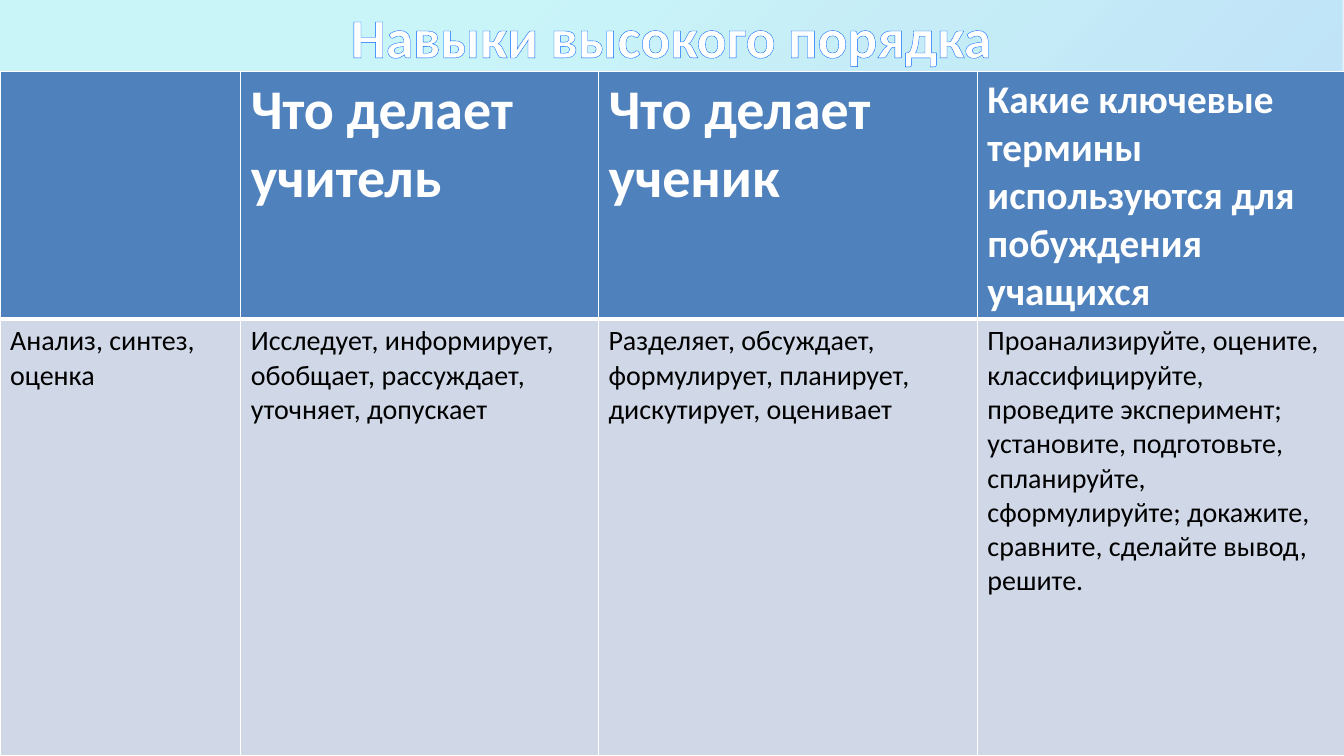
import pptx
import pptx.dml.color
import pptx.enum.shapes
import pptx.enum.text
import pptx.oxml
import pptx.oxml.ns
import pptx.util

Pt = pptx.util.Pt
RGBColor = pptx.dml.color.RGBColor
WHITE = RGBColor(0xFF, 0xFF, 0xFF)
BLACK = RGBColor(0x00, 0x00, 0x00)
HEADER_BLUE = RGBColor(0x4F, 0x81, 0xBD)
BODY_BLUE = RGBColor(0xD0, 0xD8, 0xE8)
OUTLINE_BLUE = RGBColor(0x00, 0x66, 0xFF)
BACKDROP_STOPS = [
    (25, RGBColor(0x21, 0xD6, 0xE0), 23),
    (75, RGBColor(0x00, 0x87, 0xE6), 25),
    (100, RGBColor(0x03, 0xD4, 0xA8), 18),
    (100, RGBColor(0x00, 0x5C, 0xBF), 26),
]
NAMESPACE = pptx.oxml.ns.nsdecls("a")


def line_xml(tag, width, color):
    return pptx.oxml.parse_xml(
        f'<a:{tag} {NAMESPACE} w="{int(Pt(width))}"><a:solidFill>'
        f'<a:srgbClr val="{color}"/></a:solidFill></a:{tag}>'
    )


def write_text(para, text, formats):
    span = para.add_run()
    span.text = text
    for name, value in formats.items():
        if name == "color":
            span.font.color.rgb = value
        else:
            setattr(span.font, name, value)
    return span


deck = pptx.Presentation()
deck.slide_width = Pt(960)
deck.slide_height = Pt(540)
slide = deck.slides.add_slide(deck.slide_layouts[6])

backdrop = slide.shapes.add_shape(
    pptx.enum.shapes.MSO_SHAPE.RECTANGLE, Pt(0), Pt(0), Pt(960), Pt(552)
)
backdrop.shadow.inherit = False
backdrop.line.fill.background()
stops = "".join(
    f'<a:gs pos="{place * 1000}"><a:srgbClr val="{color}">'
    f'<a:alpha val="{opacity * 1000}"/></a:srgbClr></a:gs>'
    for place, color, opacity in BACKDROP_STOPS
)
gradient = pptx.oxml.parse_xml(
    f'<a:gradFill {NAMESPACE} rotWithShape="1"><a:gsLst>{stops}</a:gsLst>'
    '<a:lin ang="2700000" scaled="0"/></a:gradFill>'
)
backdrop.element.spPr.find(pptx.oxml.ns.qn("a:prstGeom")).addnext(gradient)

title_box = slide.shapes.add_textbox(Pt(65.5), Pt(0), Pt(828), Pt(51))
title_frame = title_box.text_frame
title_frame.word_wrap = True
title_frame.vertical_anchor = pptx.enum.text.MSO_ANCHOR.MIDDLE
title_para = title_frame.paragraphs[0]
title_para.alignment = pptx.enum.text.PP_ALIGN.CENTER
title_format = {"size": Pt(39.6), "name": "Calibri", "bold": True, "color": WHITE}
title_span = write_text(title_para, "Навыки высокого порядка", title_format)
title_span.font._element.insert(0, line_xml("ln", 1.45, OUTLINE_BLUE))

rows = [
    [
        "",
        "Что делает учитель",
        "Что делает ученик",
        "Какие ключевые термины используются для побуждения учащихся",
    ],
    [
        "Анализ, синтез, оценка",
        "Исследует, информирует, обобщает, рассуждает, уточняет, допускает",
        "Разделяет, обсуждает, формулирует, планирует, дискутирует, оценивает",
        "Проанализируйте, оцените, классифицируйте, проведите эксперимент; "
        "установите, подготовьте, спланируйте, сформулируйте; докажите, "
        "сравните, сделайте вывод, решите.",
    ],
]
row_styles = [
    {
        "fill": HEADER_BLUE,
        "color": WHITE,
        "bold": True,
        "sizes": [40, 40, 40, 28],
        "borders": {"lnL": 1, "lnR": 1, "lnT": 1, "lnB": 3},
    },
    {
        "fill": BODY_BLUE,
        "color": BLACK,
        "bold": False,
        "sizes": [20] * 4,
        "borders": {"lnL": 1, "lnR": 1, "lnT": 3, "lnB": 1},
    },
]
table = slide.shapes.add_table(2, 4, Pt(0), Pt(51), Pt(961), Pt(489)).table
for column, width in zip(table.columns, [172, 255.5, 270.7, 262.8]):
    column.width = Pt(width)
for row, height in zip(table.rows, [177, 312]):
    row.height = Pt(height)

for row, texts, style in zip(table.rows, rows, row_styles):
    for cell, text, size in zip(row.cells, texts, style["sizes"]):
        properties = cell._tc.get_or_add_tcPr()
        for tag, width in style["borders"].items():
            properties.append(line_xml(tag, width, WHITE))
        cell.fill.solid()
        cell.fill.fore_color.rgb = style["fill"]
        if text:
            formats = {
                "size": Pt(size),
                "name": "Calibri",
                "bold": style["bold"],
                "color": style["color"],
            }
            write_text(cell.text_frame.paragraphs[0], text, formats)

deck.save("out.pptx")
